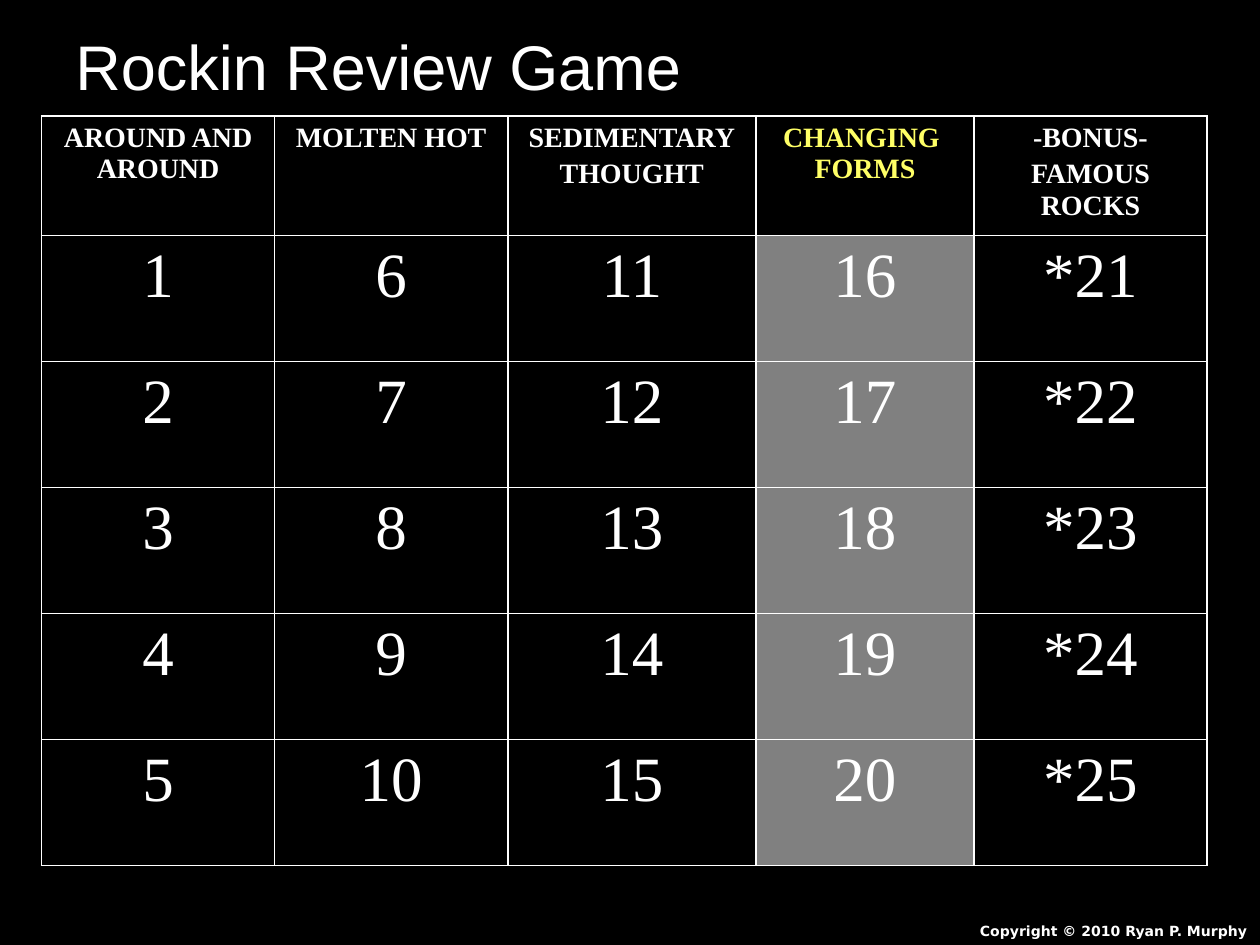
"""Build the review game board slide."""
from lxml import etree
from pptx import Presentation
from pptx.dml.color import RGBColor
from pptx.enum.text import PP_ALIGN
from pptx.oxml.ns import qn
from pptx.util import Inches, Pt

LEFT, CENTER, RIGHT = PP_ALIGN.LEFT, PP_ALIGN.CENTER, PP_ALIGN.RIGHT
WHITE, YELLOW, GRAY, BLACK = "FFFFFF", "FFFF66", "808080", "000000"
SERIF = "Times New Roman"


def rgb(value):
    return RGBColor.from_string(value)


def add_run(paragraph, text, size, font, color=WHITE, bold=False):
    run = paragraph.add_run()
    run.text = text
    run.font.size = Pt(size)
    run.font.name = font
    run.font.bold = bold
    run.font.color.rgb = rgb(color)


prs = Presentation()
prs.slide_width, prs.slide_height = Inches(10), Inches(7.5)
slide = prs.slides.add_slide(prs.slide_layouts[6])
slide.background.fill.solid()
slide.background.fill.fore_color.rgb = rgb(BLACK)

column_widths = [1.85, 1.85, 1.97, 1.73, 1.85]
row_heights = [0.95] + [1] * 5
topics = [
    [["AROUND AND AROUND"]],
    [["MOLTEN HOT"]],
    [["SEDIMENTARY"], ["THOUGHT"]],
    [["CHANGING ", "FORMS"]],
    [["-BONUS-"], ["FAMOUS ROCKS"]],
]
current_topic, bonus_topic = 3, 4
questions_per_topic = len(row_heights) - 1

board = slide.shapes.add_table(
    len(row_heights), len(column_widths), Inches(0.33), Inches(0.92),
    Inches(sum(column_widths)), Inches(sum(row_heights))).table
board.first_row = board.horz_banding = False
for column, width in zip(board.columns, column_widths):
    column.width = Inches(width)
for row, height in zip(board.rows, row_heights):
    row.height = Inches(height)

for col, topic in enumerate(topics):
    for row in range(len(row_heights)):
        cell = board.cell(row, col)
        properties = cell._tc.get_or_add_tcPr()
        for side in ("a:lnL", "a:lnR", "a:lnT", "a:lnB"):
            border = etree.SubElement(properties, qn(side), w=str(Pt(1)))
            border_fill = etree.SubElement(border, qn("a:solidFill"))
            etree.SubElement(border_fill, qn("a:srgbClr"), val=WHITE)
        if row and col == current_topic:
            cell.fill.solid()
            cell.fill.fore_color.rgb = rgb(GRAY)
        else:
            cell.fill.background()

        if row:
            star = "*" if col == bonus_topic else ""
            lines = [[f"{star}{col * questions_per_topic + row}"]]
            size, color = 36, WHITE
        else:
            lines = topic
            size, color = 16, YELLOW if col == current_topic else WHITE
        for index, parts in enumerate(lines):
            paragraph = cell.text_frame.paragraphs[0]
            if index:
                paragraph = cell.text_frame.add_paragraph()
                paragraph.space_before = Pt(size * 0.2)
            paragraph.alignment = CENTER
            for part_index, part in enumerate(parts):
                if part_index:
                    paragraph.add_line_break()
                add_run(paragraph, part, size, SERIF, color, bold=row == 0)

for text, box, size, font, bold, alignment in [
    ("Copyright © 2010 Ryan P. Murphy", (7.08, 7.27, 2.92, 0.23), 8, "DejaVu Sans", True, RIGHT),
    ("Rockin Review Game", (0.5, 0.17, 8.5, 0.7), 36, "Arial", False, LEFT),
]:
    frame = slide.shapes.add_textbox(*map(Inches, box)).text_frame
    frame.word_wrap = True
    frame.paragraphs[0].alignment = alignment
    add_run(frame.paragraphs[0], text, size, font, bold=bold)

prs.save("out.pptx")
